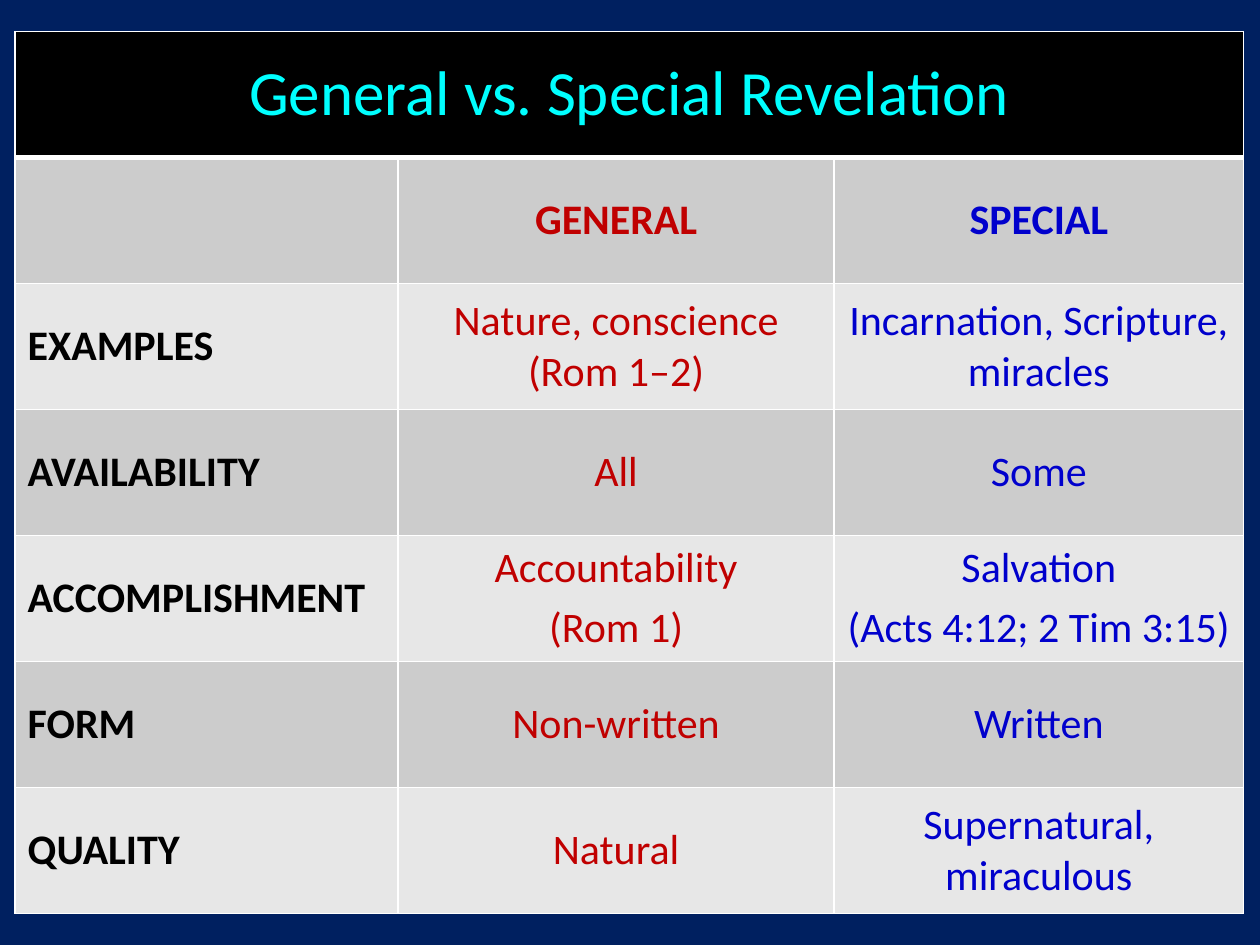
from lxml.etree import SubElement
from pptx import Presentation
from pptx.dml.color import RGBColor
from pptx.enum.text import MSO_ANCHOR, PP_ALIGN
from pptx.oxml.ns import qn
from pptx.util import Inches, Pt

# Content: each cell is a list of paragraphs
TITLE = "General vs. Special Revelation"
ROWS = [
    ([], ["GENERAL"], ["SPECIAL"]),
    (["EXAMPLES"], ["Nature, conscience (Rom 1–2)"], ["Incarnation, Scripture, miracles"]),
    (["AVAILABILITY"], ["All"], ["Some"]),
    (["ACCOMPLISHMENT"], ["Accountability", "(Rom 1)"], ["Salvation", "(Acts 4:12; 2 Tim 3:15)"]),
    (["FORM"], ["Non-written"], ["Written"]),
    (["QUALITY"], ["Natural"], ["Supernatural, miraculous"]),
]

COLORS = {
    "background": "002060", "title": "00FFFF", "header": "000000",
    "border": "FFFFFF", "dark band": "CCCCCC", "light band": "E7E7E7",
    "label": "000000", "general": "C00000", "special": "0000CC",
}
COLUMNS = [("label", 3.04), ("general", 3.46), ("special", 3.25)]
LEFT, TOP, ROW_HEIGHT = 0.12, 0.25, 1


def color(name):
    return RGBColor.from_string(COLORS[name])


def set_borders(cell, top=1, bottom=1):
    properties = cell._tc.get_or_add_tcPr()
    for side, points in (("L", 1), ("R", 1), ("T", top), ("B", bottom)):
        line = SubElement(properties, qn(f"a:ln{side}"), w=str(Pt(points)))
        fill = SubElement(line, qn("a:solidFill"))
        SubElement(fill, qn("a:srgbClr"), val=COLORS["border"])


def style_cell(cell, fill, top=1, bottom=1):
    set_borders(cell, top, bottom)
    cell.fill.solid()
    cell.fill.fore_color.rgb = color(fill)
    cell.vertical_anchor = MSO_ANCHOR.MIDDLE


def write(cell, lines, ink, size=24, bold=False, align=PP_ALIGN.CENTER, spacing=None):
    frame = cell.text_frame
    for index, line in enumerate(lines):
        para = frame.add_paragraph() if index else frame.paragraphs[0]
        para.alignment = align
        para.line_spacing = spacing
        # Space before as a share of the text size
        before = SubElement(para._p.get_or_add_pPr(), qn("a:spcBef"))
        SubElement(before, qn("a:spcPct"), val="20000")
        span = para.add_run()
        span.text = line
        span.font.name = "Calibri"
        span.font.size = Pt(size)
        span.font.bold = bold
        span.font.color.rgb = color(ink)


# Page
deck = Presentation()
deck.slide_width, deck.slide_height = Inches(10), Inches(7.5)
page = deck.slides.add_slide(deck.slide_layouts[6])
page.background.fill.solid()
page.background.fill.fore_color.rgb = color("background")

# Table grid
row_count = len(ROWS) + 1
total_width = sum(width for _, width in COLUMNS)
table = page.shapes.add_table(
    row_count, len(COLUMNS), Inches(LEFT), Inches(TOP),
    Inches(total_width), Inches(row_count * ROW_HEIGHT)).table
for column, (_, width) in zip(table.columns, COLUMNS):
    column.width = Inches(width)
for row in table.rows:
    row.height = Inches(ROW_HEIGHT)

# Title row
for cell in table.rows[0].cells:
    style_cell(cell, "header", bottom=3)
table.cell(0, 0).merge(table.cell(0, len(COLUMNS) - 1))
write(table.cell(0, 0), [TITLE], "title", size=36, bold=False, spacing=0.9)

# Comparison rows
for row_index, entries in enumerate(ROWS, start=1):
    band = "dark band" if row_index % 2 else "light band"
    for column_index, (lines, (ink, _)) in enumerate(zip(entries, COLUMNS)):
        cell = table.cell(row_index, column_index)
        style_cell(cell, band, top=3 if row_index == 1 else 1)
        write(cell, lines, ink, bold=row_index == 1 or ink == "label",
              align=PP_ALIGN.LEFT if ink == "label" else PP_ALIGN.CENTER)

deck.save("out.pptx")
